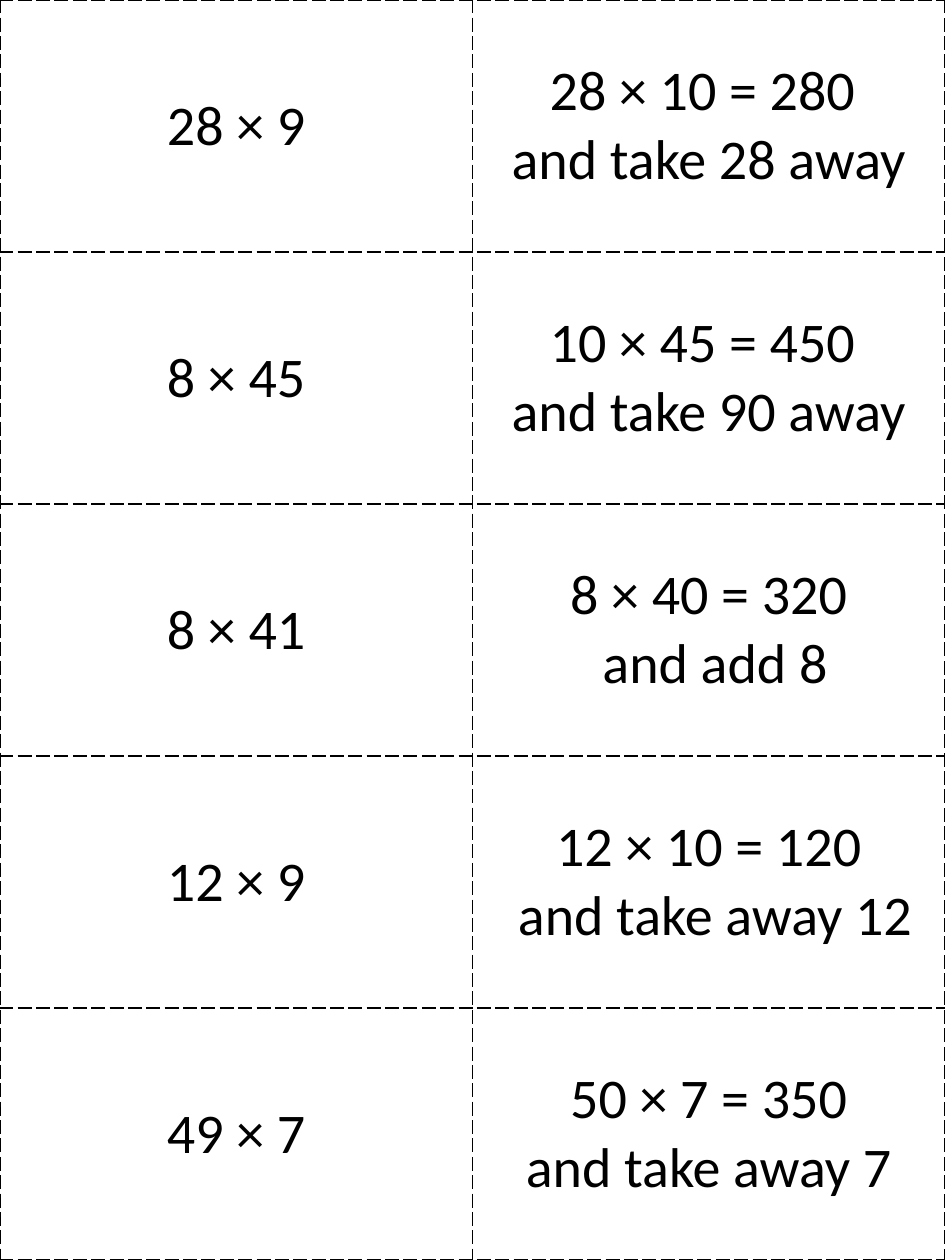
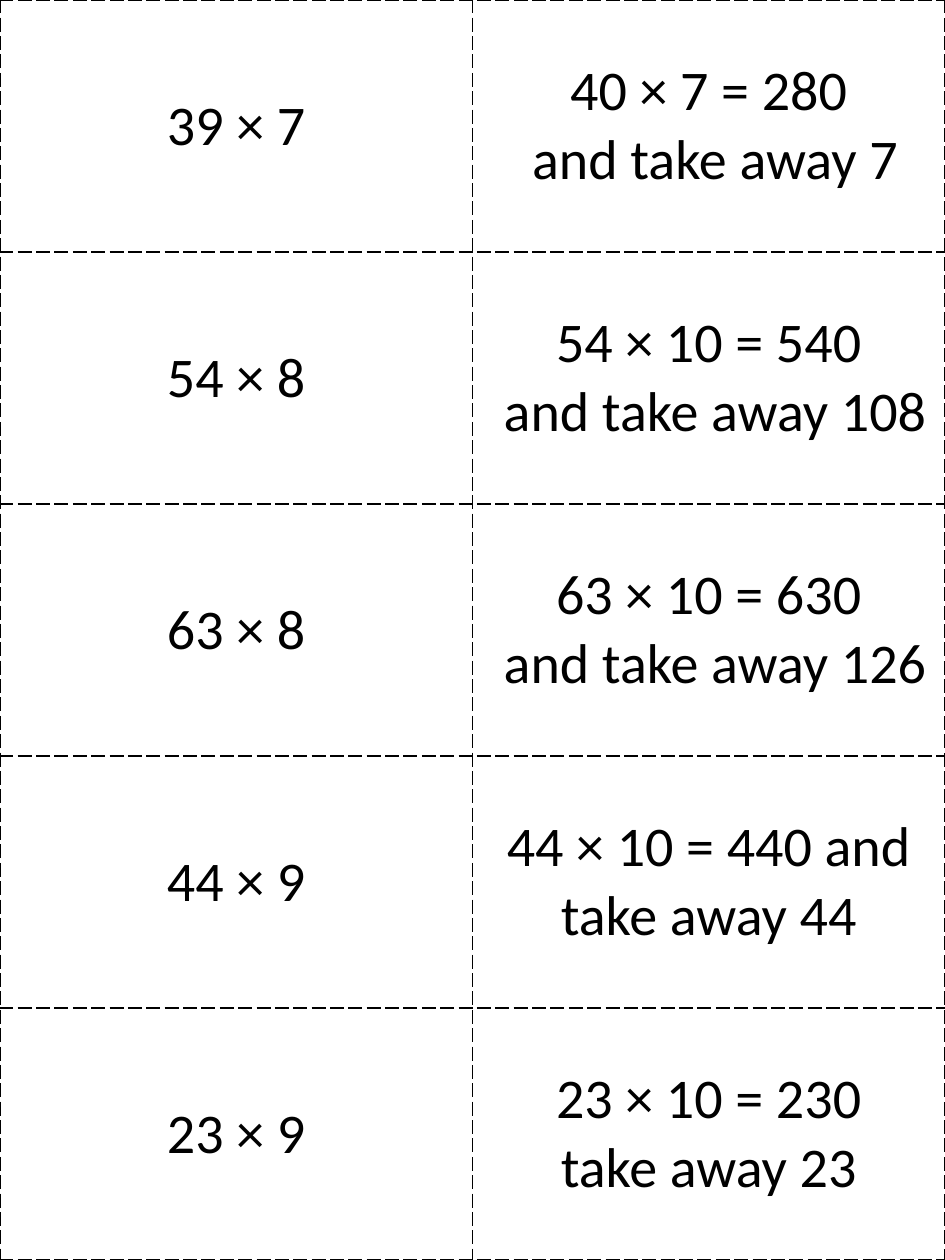
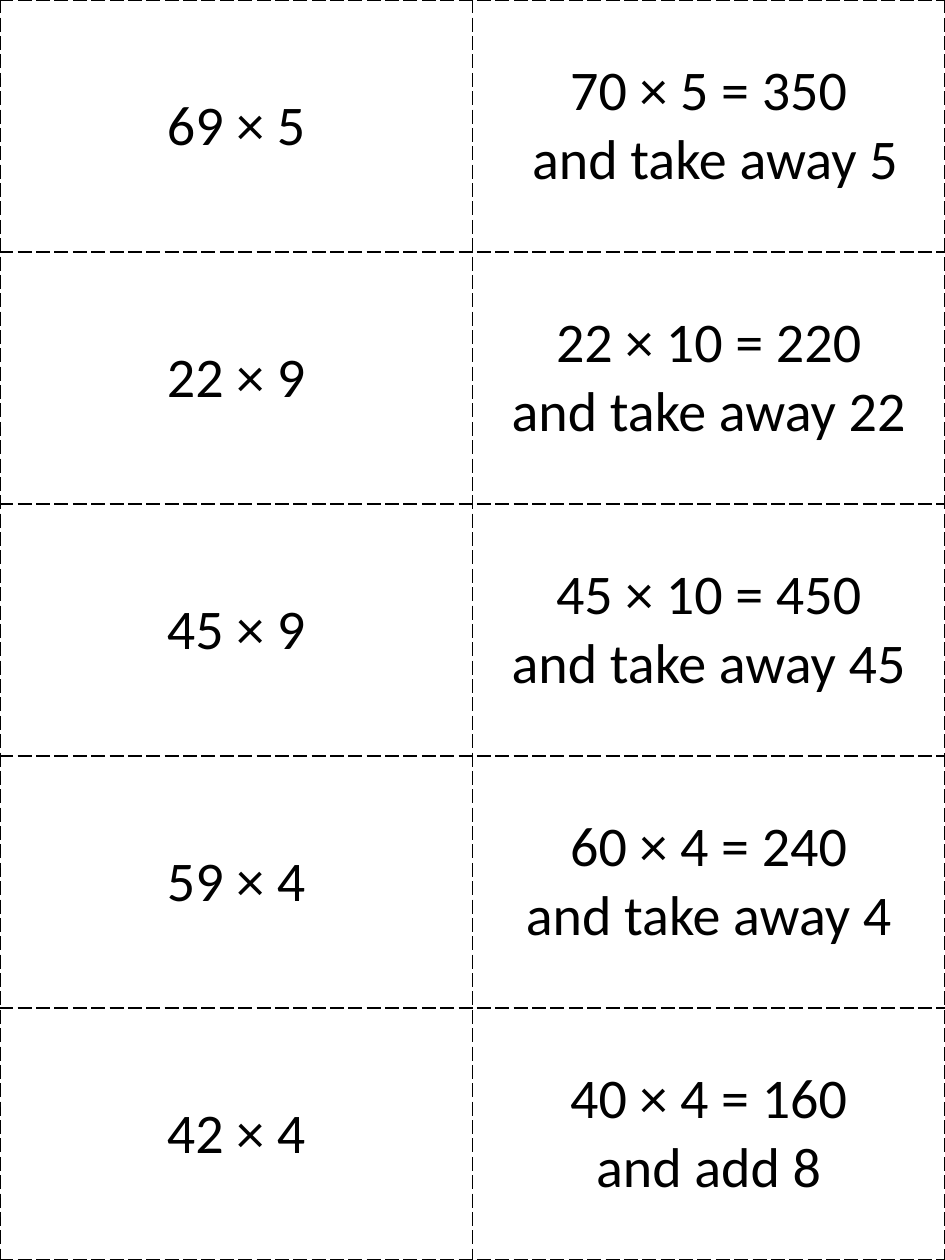
from lxml import etree
from pptx import Presentation
from pptx.dml.color import RGBColor
from pptx.enum.text import MSO_ANCHOR, PP_ALIGN
from pptx.oxml.ns import qn
from pptx.util import Cm, Pt

PAGE_WIDTH, PAGE_HEIGHT = Cm(19.05), Cm(25.4)
INK = RGBColor(0x00, 0x00, 0x00)
FONT, FONT_SIZE = "Calibri", Pt(32)
BORDER_WIDTH, BORDER_DASH = Pt(1), "lgDash"
CARD_MARGIN = Cm(0.18)
LAST_MARGIN_SIDE, LAST_MARGIN_END = Cm(0.25), Cm(0.13)
CENTER, MIDDLE = PP_ALIGN.CENTER, MSO_ANCHOR.MIDDLE
BLANK_LAYOUT = 6

# Each page: pairs of a question and the lines of its strategy
CARD_PAGES = [
    [
        ("28 × 9", ["28 × 10 = 280 ", "and take 28 away"]),
        ("8 × 45", ["10 × 45 = 450 ", "and take 90 away"]),
        ("8 × 41", ["8 × 40 = 320", " and add 8"]),
        ("12 × 9", ["12 × 10 = 120", " and take away 12"]),
        ("49 × 7", ["50 × 7 = 350", "and take away 7"]),
    ],
    [
        ("39 × 7", ["40 × 7 = 280", " and take away 7"]),
        ("54 × 8", ["54 × 10 = 540", " and take away 108"]),
        ("63 × 8", ["63 × 10 = 630", " and take away 126"]),
        ("44 × 9", ["44 × 10 = 440 and take away 44"]),
        ("23 × 9", ["23 × 10 = 230", "take away 23"]),
    ],
    [
        ("69 × 5", ["70 × 5 = 350", " and take away 5"]),
        ("22 × 9", ["22 × 10 = 220", "and take away 22"]),
        ("45 × 9", ["45 × 10 = 450", "and take away 45"]),
        ("59 × 4", ["60 × 4 = 240", "and take away 4"]),
        ("42 × 4", ["40 × 4 = 160", "and add 8"]),
    ],
]


def add_cut_lines(cell):
    """Draw a dashed border on all four sides of a card."""
    properties = cell._tc.get_or_add_tcPr()
    for position, side in enumerate(("lnL", "lnR", "lnT", "lnB")):
        line = etree.Element(qn(f"a:{side}"), w=str(BORDER_WIDTH))
        fill = etree.SubElement(line, qn("a:solidFill"))
        etree.SubElement(fill, qn("a:srgbClr"), val=str(INK))
        etree.SubElement(line, qn("a:prstDash"), val=BORDER_DASH)
        properties.insert(position, line)


def fill_card(cell, lines, side_margin, end_margin):
    """Write centred lines into one card."""
    cell.fill.background()
    cell.vertical_anchor = MIDDLE
    cell.margin_left = cell.margin_right = side_margin
    cell.margin_top = cell.margin_bottom = end_margin
    frame = cell.text_frame
    for index, text in enumerate(lines):
        para = frame.add_paragraph() if index else frame.paragraphs[0]
        para.alignment = CENTER
        span = para.add_run()
        span.text = text
        span.font.name = FONT
        span.font.size = FONT_SIZE
        span.font.color.rgb = INK
    add_cut_lines(cell)


def add_card_grid(page, cards, left, top, width, height):
    """Lay out question and strategy cards as a two-column table."""
    table = page.shapes.add_table(len(cards), 2, left, top, width, height).table
    table.first_row = table.horz_banding = False
    for row, (question, strategy) in enumerate(cards):
        margins = (CARD_MARGIN, CARD_MARGIN)
        if row == len(cards) - 1:
            margins = (LAST_MARGIN_SIDE, LAST_MARGIN_END)
        fill_card(table.cell(row, 0), [question], *margins)
        fill_card(table.cell(row, 1), strategy, *margins)


def main():
    deck = Presentation()
    deck.slide_width, deck.slide_height = PAGE_WIDTH, PAGE_HEIGHT
    for cards in CARD_PAGES:
        page = deck.slides.add_slide(deck.slide_layouts[BLANK_LAYOUT])
        add_card_grid(page, cards, 0, 0, PAGE_WIDTH, PAGE_HEIGHT)
    deck.save("out.pptx")


if __name__ == "__main__":
    main()
